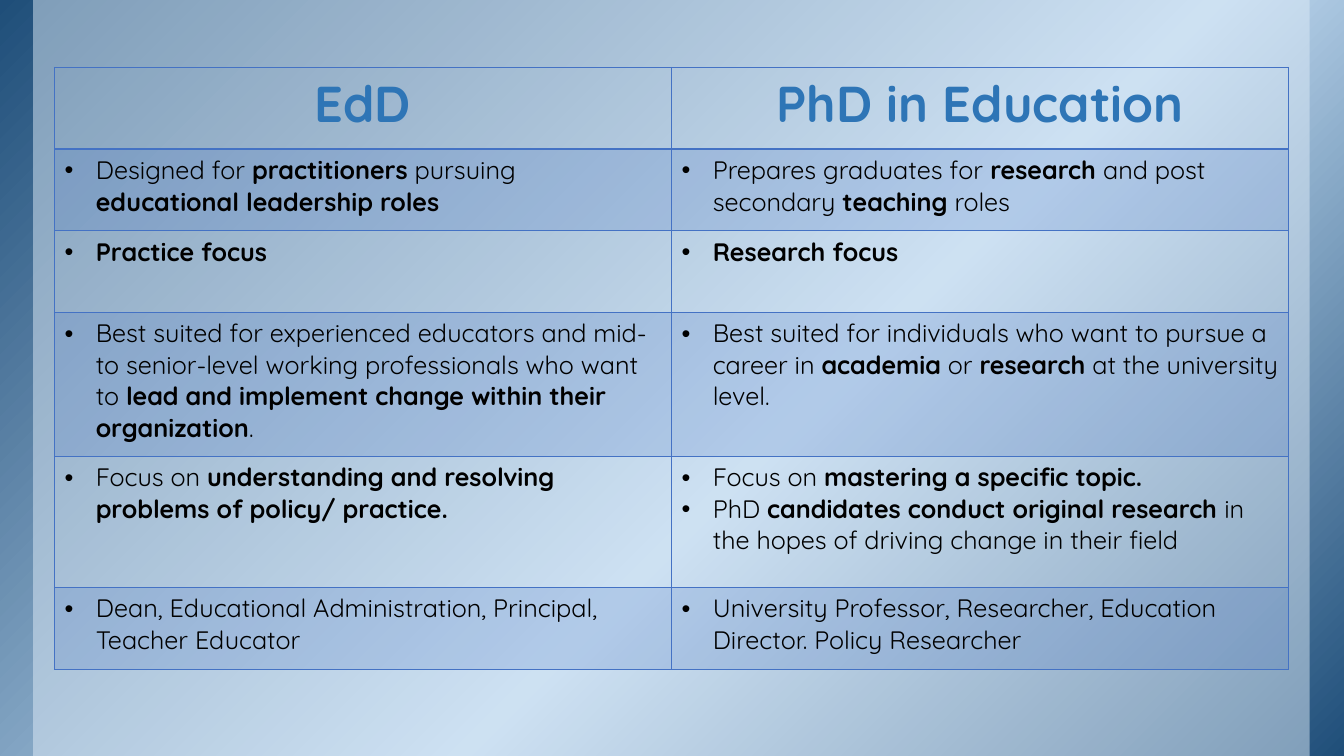
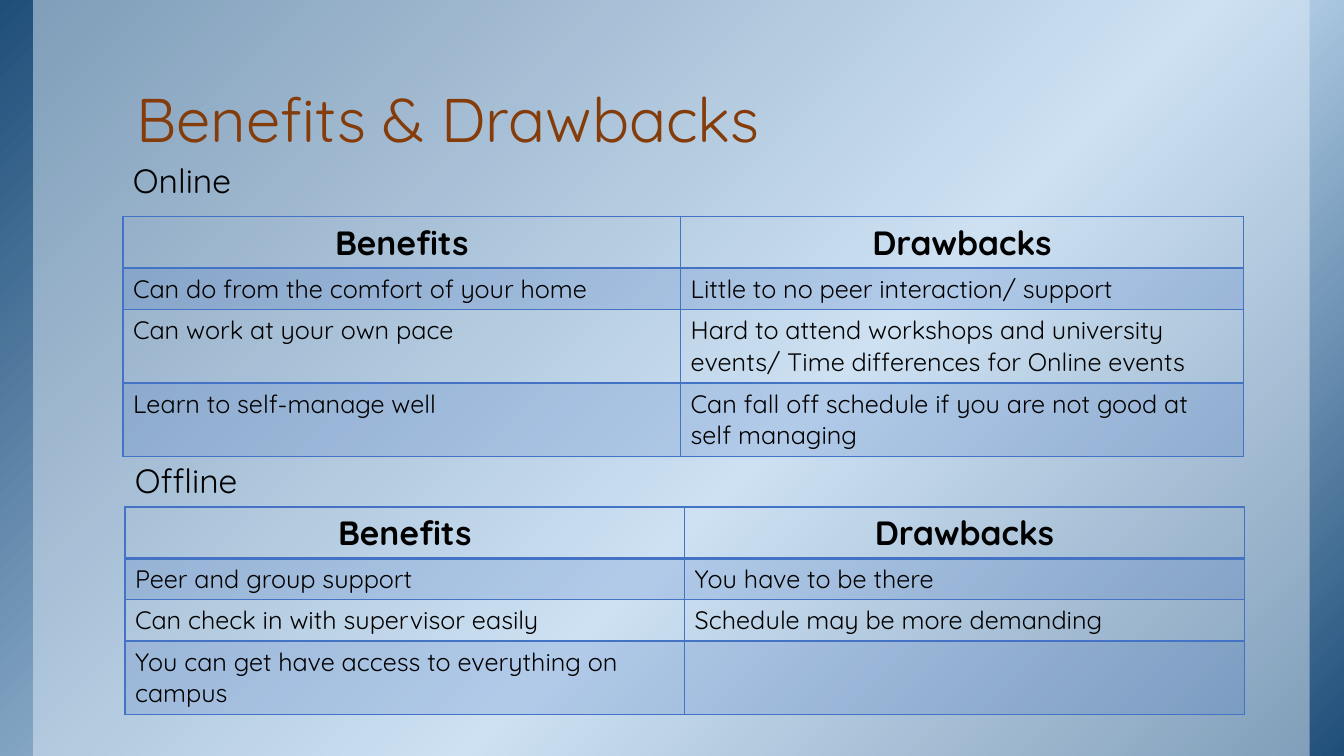
from lxml.etree import SubElement
from pptx import Presentation
from pptx.dml.color import RGBColor
from pptx.enum.shapes import MSO_SHAPE
from pptx.enum.text import MSO_ANCHOR, MSO_AUTO_SIZE, PP_ALIGN
from pptx.oxml.ns import qn
from pptx.util import Inches, Pt

FONT = "Quicksand"
COLORS = {
    "navy": "1F4E79",
    "sky": "BDD7EE",
    "veil": "DEEBF7",
    "grid": "4472C4",
    "heading": "2E75B6",
    "title": "843C0B",
    "text": "000000",
}
SLIDE_WIDTH, SLIDE_HEIGHT = 13.33, 7.5
BULLET_INDENT = 0.31

DEGREES = [
    ("EdD", "PhD in Education"),
    ("Designed for **practitioners** pursuing **educational leadership roles**",
     "Prepares graduates for** research **and post secondary **teaching** roles"),
    ("**Practice focus**", "**Research focus**"),
    ("Best suited for experienced educators and mid- to senior-level working "
     "professionals who want to **lead and implement change within their "
     "organization**.",
     "Best suited for individuals who want to pursue a career in **academia** or "
     "**research **at the university level."),
    ("Focus on **understanding and resolving problems of policy/ practice.**",
     "Focus on **mastering a specific topic.**\n"
     "PhD **candidates conduct original research **in the hopes of driving "
     "change in their field"),
    ("Dean, Educational Administration, Principal, Teacher Educator",
     "University Professor, Researcher, Education Director. Policy Researcher"),
]
ONLINE = [
    ("Benefits", "Drawbacks"),
    ("Can do from the comfort of your home",
     "Little to no peer interaction/ support"),
    ("Can work at your own pace",
     "Hard to attend workshops and university events/ Time differences for "
     "Online events"),
    ("Learn to self-manage well",
     "Can fall off schedule if you are not good at self managing"),
]
OFFLINE = [
    ("Benefits", "Drawbacks"),
    ("Peer and group support", "You have to be there"),
    ("Can check in with supervisor easily", "Schedule may be more demanding"),
    ("You can get have access to everything on campus", ""),
]


def rgb(name):
    return RGBColor.from_string(COLORS[name])


def format_run(run, size, color, bold=False):
    run.font.name = FONT
    run.font.size = Pt(size)
    run.font.bold = bold
    run.font.color.rgb = rgb(color)


def fill_translucent(fill, properties, color, opacity):
    """Fill with a see-through colour; properties is the element holding the fill."""
    fill.solid()
    fill.fore_color.rgb = rgb(color)
    tint = properties.xpath("a:solidFill/a:srgbClr")[0]
    SubElement(tint, qn("a:alpha"), val=str(opacity * 1000))


def fill_gradient(shape, stops, angle):
    shape.fill.gradient()
    shape.fill.gradient_angle = 360 - angle
    stop_list = shape.element.spPr.xpath("a:gradFill/a:gsLst")[0]
    for old_stop in list(stop_list):
        stop_list.remove(old_stop)
    for position, color in stops:
        stop = SubElement(stop_list, qn("a:gs"), pos=str(position * 1000))
        SubElement(stop, qn("a:srgbClr"), val=COLORS[color])


def add_backdrop(prs, slide):
    """Draw the backdrop on a slide, then move it to the back of the master."""
    backdrop, veil = [
        slide.shapes.add_shape(MSO_SHAPE.RECTANGLE, Inches(left), 0,
                               Inches(width), Inches(SLIDE_HEIGHT))
        for left, width in ((0, SLIDE_WIDTH), (0.33, 12.66))
    ]
    fill_gradient(backdrop, [(0, "navy"), (58, "sky"), (100, "navy")], 45)
    fill_translucent(veil.fill, veil.element.spPr, "veil", 50)
    for order, layer in enumerate((backdrop, veil)):
        layer.shadow.inherit = False
        layer.line.fill.background()
        layer.element.xpath(".//p:cNvPr")[0].set("id", str(100 + order))
        prs.slide_master.shapes.element.insert(2 + order, layer.element)


def set_borders(properties, widths):
    for side, width in widths.items():
        line = SubElement(properties, qn(f"a:ln{side}"), w=str(Pt(width)))
        paint = SubElement(line, qn("a:solidFill"))
        SubElement(paint, qn("a:srgbClr"), val=COLORS["grid"])


def add_bullet(paragraph):
    properties = paragraph._p.get_or_add_pPr()
    properties.set("marL", str(Inches(BULLET_INDENT)))
    properties.set("indent", str(-Inches(BULLET_INDENT)))
    SubElement(properties, qn("a:buFont"), typeface="Arial")
    SubElement(properties, qn("a:buChar"), char="•")


def write_body(frame, marked_text, bulleted):
    """Write one paragraph a line, with the parts between ** in bold."""
    for index, line in enumerate(marked_text.split("\n")):
        paragraph = frame.add_paragraph() if index else frame.paragraphs[0]
        if bulleted:
            add_bullet(paragraph)
        for part, words in enumerate(line.split("**")):
            if words:
                run = paragraph.add_run()
                run.text = words
                format_run(run, 18, "text", bold=part % 2 == 1)


def write_header(frame, heading, size, color):
    frame.text = heading
    frame.paragraphs[0].alignment = PP_ALIGN.CENTER
    format_run(frame.paragraphs[0].runs[0], size, color, bold=True)


def add_comparison(slide, rows, left, top, column_widths, row_heights,
                   header_size=24, header_color="text", bulleted=False):
    table = slide.shapes.add_table(
        len(rows), len(column_widths), Inches(left), Inches(top),
        Inches(sum(column_widths)), Inches(sum(row_heights))).table
    table.first_row = table.horz_banding = False
    for column, width in zip(table.columns, column_widths):
        column.width = Inches(width)
    for r, (texts, height) in enumerate(zip(rows, row_heights)):
        table.rows[r].height = Inches(height)
        for c, text in enumerate(texts):
            cell = table.cell(r, c)
            properties = cell._tc.get_or_add_tcPr()
            set_borders(properties, {"L": 1, "R": 1, "T": 2 if r == 1 else 1,
                                     "B": 2 if r == 0 else 1})
            if r % 2:
                fill_translucent(cell.fill, properties, "grid", 20)
            else:
                cell.fill.background()
            if r == 0:
                write_header(cell.text_frame, text, header_size, header_color)
            else:
                write_body(cell.text_frame, text, bulleted)


def set_title(slide, text):
    title = slide.shapes.title
    title.left, title.top = Inches(1.22), Inches(0.08)
    title.width, title.height = Inches(11.11), Inches(1.53)
    frame = title.text_frame
    frame.text = text
    frame.auto_size = MSO_AUTO_SIZE.NONE
    frame.vertical_anchor = MSO_ANCHOR.BOTTOM
    frame.margin_left = frame.margin_right = Inches(0.13)
    frame.margin_top = frame.margin_bottom = Inches(0.07)
    paragraph = frame.paragraphs[0]
    paragraph.alignment = PP_ALIGN.LEFT
    paragraph.line_spacing = 0.85
    format_run(paragraph.runs[0], 44, "title")


def add_caption(slide, text, left, top):
    frame = slide.shapes.add_textbox(Inches(left), Inches(top),
                                     Inches(3.53), Inches(0.48)).text_frame
    frame.word_wrap = True
    frame.auto_size = MSO_AUTO_SIZE.SHAPE_TO_FIT_TEXT
    frame.text = text
    frame.paragraphs[0].line_spacing = 0.95
    format_run(frame.paragraphs[0].runs[0], 24, "text")


def main():
    prs = Presentation()
    prs.slide_width, prs.slide_height = Inches(SLIDE_WIDTH), Inches(SLIDE_HEIGHT)
    title_only, blank = prs.slide_layouts[5], prs.slide_layouts[6]

    degrees = prs.slides.add_slide(blank)
    add_backdrop(prs, degrees)
    add_comparison(degrees, DEGREES, 0.54, 0.67, [6.12, 6.12],
                   [0.81, 0.81, 0.81, 1.43, 1.3, 0.81],
                   header_size=36, header_color="heading", bulleted=True)

    study_modes = prs.slides.add_slide(title_only)
    set_title(study_modes, "Benefits & Drawbacks")
    add_caption(study_modes, "Online", 1.22, 1.57)
    add_comparison(study_modes, ONLINE, 1.22, 2.15, [5.53, 5.58],
                   [0.51, 0.41, 0.73, 0.73])
    add_caption(study_modes, "Offline", 1.24, 4.54)
    add_comparison(study_modes, OFFLINE, 1.24, 5.03, [5.55, 5.55],
                   [0.51, 0.41, 0.41, 0.73])

    prs.save("out.pptx")


if __name__ == "__main__":
    main()
